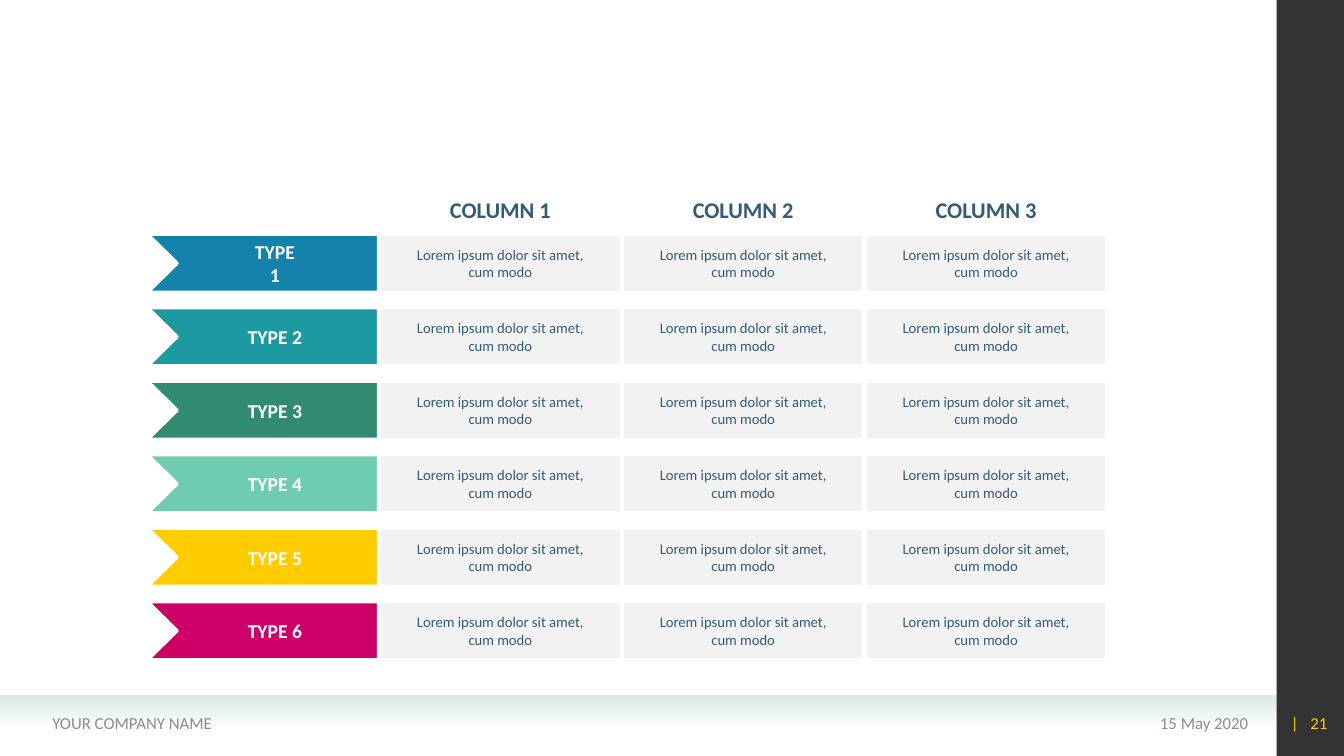
"""Build a comparison slide: six coloured types against three columns."""
from lxml import etree
from pptx import Presentation
from pptx import util as u
from pptx.dml.color import RGBColor
from pptx.enum import shapes, text
from pptx.oxml import ns

COLORS = {
    "ink": "335B74", "white": "FFFFFF", "cell": "F2F2F2", "footer": "8C8C8C",
    "page": "FFCC00", "mist": "D9E9E8", "sidebar": "000000",
    "blue": "1482AB", "teal": "1D9AA1", "green": "318B71",
    "mint": "70CCB1", "yellow": "FFCC00", "magenta": "CC0066",
}
COLUMNS = ["COLUMN 1", "COLUMN 2", "COLUMN 3"]
TYPES = [
    ("TYPE 1", "blue", 1.2), ("TYPE 2", "teal", 2), ("TYPE 3", "green", 2),
    ("TYPE 4", "mint", 2), ("TYPE 5", "yellow", 2), ("TYPE 6", "magenta", 2),
]
DETAIL = "Lorem ipsum dolor sit amet, cum modo"
LEFT, CENTER, RIGHT = text.PP_ALIGN.LEFT, text.PP_ALIGN.CENTER, text.PP_ALIGN.RIGHT
MIDDLE, BOTTOM = text.MSO_ANCHOR.MIDDLE, text.MSO_ANCHOR.BOTTOM


def rgb(name):
    """Return the named colour."""
    return RGBColor.from_string(COLORS[name])


def write(holder, wording, size, color, align=CENTER, bold=False, anchor=MIDDLE,
          insets=(0.25, 0.25)):
    """Put one formatted paragraph into a shape."""
    frame = holder.text_frame
    frame.word_wrap = True
    frame.vertical_anchor = anchor
    frame.margin_left, frame.margin_right = map(u.Cm, insets)
    frame.margin_top = frame.margin_bottom = u.Cm(0.1)
    paragraph = frame.paragraphs[0]
    paragraph.text = wording
    paragraph.alignment = align
    font = paragraph.font
    font.name, font.size, font.bold = "Calibri", u.Pt(size), bold
    font.color.rgb = rgb(color)


def add_label(slide, box, wording, size, color, **style):
    """Add a text box in the given box."""
    label = slide.shapes.add_textbox(*map(u.Cm, box))
    write(label, wording, size, color, **style)


def add_rectangle(slide, box):
    """Add a rectangle without shadow or outline."""
    rectangle = slide.shapes.add_shape(shapes.MSO_SHAPE.RECTANGLE, *map(u.Cm, box))
    rectangle.shadow.inherit = False
    rectangle.line.fill.background()
    return rectangle


def set_alpha(shape, percents):
    """Set the opacity of each fill colour of a shape in turn."""
    for color, percent in zip(shape.element.spPr.iter(ns.qn("a:srgbClr")), percents):
        etree.SubElement(color, ns.qn("a:alpha"), val=str(percent * 1000))


def paint(shape, color):
    """Give a table part its fill and thick white outline."""
    shape.shadow.inherit = False
    shape.fill.solid()
    shape.fill.fore_color.rgb = rgb(color)
    shape.line.color.rgb = rgb("white")
    shape.line.width = u.Pt(3)


def add_frame(slide, box):
    """Draw the footer band, the dark sidebar and the footer texts."""
    left, top, width, height = box
    side = 1.7
    band = add_rectangle(slide, (left, top + 17.53, width - side, 0.79))
    band.fill.gradient()
    band.fill.gradient_angle = 270
    for stop in band.fill.gradient_stops:
        stop.color.rgb = rgb("mist")
    set_alpha(band, [100, 0])
    sidebar = add_rectangle(slide, (left + width - side, top, side, height))
    sidebar.fill.solid()
    sidebar.fill.fore_color.rgb = rgb("sidebar")
    set_alpha(sidebar, [80])
    for x, length, wording, color, align in [
        (23.11, 8.6, "15 May 2020", "footer", RIGHT),
        (1.07, 12.45, "YOUR COMPANY NAME", "footer", LEFT),
        (32.23, 0.8, "|", "page", CENTER),
        (32.6, 1.1, "21", "page", RIGHT),
    ]:
        add_label(slide, (left + x, top + 17.7, length, 1.02), wording, 12, color,
                  align=align)


def add_type(slide, box, wording, color, label_width):
    """Draw a notched row heading with its label."""
    left, top, width, height = box
    notch = 0.76
    outline = [(left + width, top), (left + width, top + height), (left, top + height),
               (left + notch, top + height / 2)]
    builder = slide.shapes.build_freeform(u.Cm(left), u.Cm(top))
    builder.add_line_segments([(u.Cm(x), u.Cm(y)) for x, y in outline])
    heading = builder.convert_to_shape()
    paint(heading, color)
    middle = width / 2 + 0.31
    insets = (middle - label_width / 2, width - middle - label_width / 2)
    write(heading, wording, 14, "white", bold=True, insets=insets)


def add_comparison(slide, box):
    """Lay out column titles, row headings and cells."""
    left, top, width, height = box
    title_height, gap, row_height, heading_width = 0.94, 0.17, 1.49, 5.86
    cell_width = (width - heading_width) / len(COLUMNS)
    cell_lefts = [left + heading_width + i * cell_width for i in range(len(COLUMNS))]
    for x, title in zip(cell_lefts, COLUMNS):
        add_label(slide, (x, top, cell_width, title_height), title, 16, "ink",
                  bold=True, anchor=BOTTOM)
    first_row = top + title_height + gap
    pitch = (top + height - first_row - row_height) / (len(TYPES) - 1)
    for i, (name, color, label_width) in enumerate(TYPES):
        y = first_row + i * pitch
        add_type(slide, (left, y, heading_width, row_height), name, color, label_width)
        for x in cell_lefts:
            cell = add_rectangle(slide, (x, y, cell_width, row_height))
            paint(cell, "cell")
            write(cell, DETAIL, 10.5, "ink", insets=(0.6, 0.6))


def main():
    """Create the slide and save it."""
    deck = Presentation()
    deck.slide_width, deck.slide_height = u.Cm(33.87), u.Cm(19.05)
    slide = deck.slides.add_slide(deck.slide_layouts[6])
    add_frame(slide, (0, 0, 33.87, 19.05))
    add_comparison(slide, (3.69, 4.78, 24.22, 11.86))
    deck.save("out.pptx")


if __name__ == "__main__":
    main()
